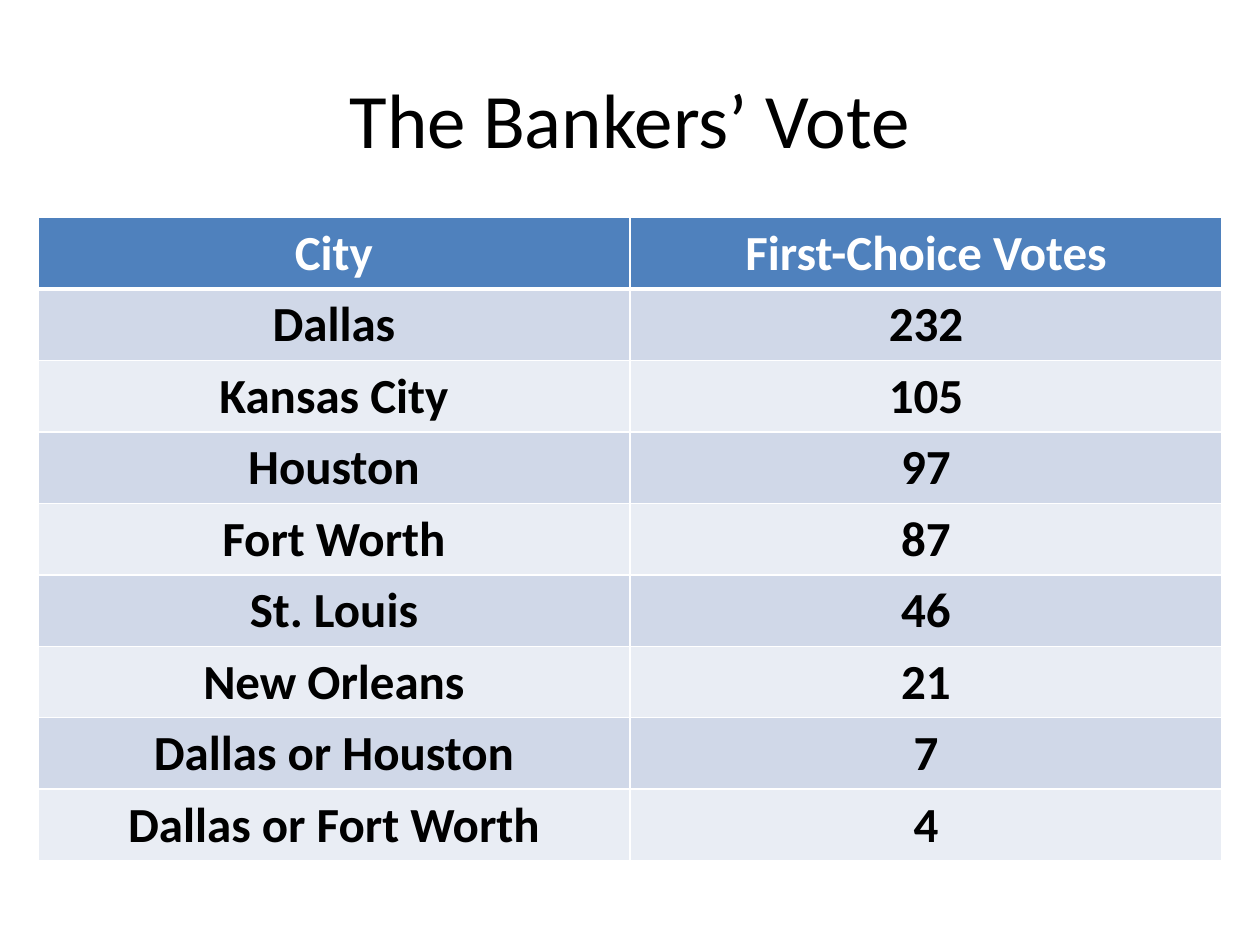
from pptx import Presentation
from pptx import util as u
from pptx.dml.color import RGBColor
from pptx.enum import text
from pptx.oxml import parse_xml
from pptx.oxml.ns import nsdecls

WIDTH, HEIGHT = 10, 7.5
HEADER_FILL, BAND_FILLS = "4F81BD", ("D0D8E8", "E9EDF4")
VOTES = [
    ("City", "First-Choice Votes"),
    ("Dallas", "232"),
    ("Kansas City", "105"),
    ("Houston", "97"),
    ("Fort Worth", "87"),
    ("St. Louis", "46"),
    ("New Orleans", "21"),
    ("Dallas or Houston", "7"),
    ("Dallas or Fort Worth", "4"),
]


def color(value):
    return RGBColor.from_string(value)


def write(frame, words, size=28, fill="000000", bold=False):
    """Put one centred line of formatted text into a text frame."""
    frame.word_wrap = True
    frame.vertical_anchor = text.MSO_ANCHOR.MIDDLE
    para = frame.paragraphs[0]
    para.alignment = text.PP_ALIGN.CENTER
    span = para.add_run()
    span.text = words
    span.font.name = "Calibri"
    span.font.size = u.Pt(size)
    span.font.bold = bold
    span.font.color.rgb = color(fill)


def add_borders(cell, bottom=1):
    """Draw white cell borders; they must come before the cell's fill."""
    properties = cell._tc.get_or_add_tcPr()
    sides = {"lnL": 1, "lnR": 1, "lnT": 1, "lnB": bottom}
    for place, (side, points) in enumerate(sides.items()):
        properties.insert(place, parse_xml(
            f'<a:{side} {nsdecls("a")} w="{u.Pt(points)}"><a:solidFill>'
            f'<a:srgbClr val="FFFFFF"/></a:solidFill></a:{side}>'))


def add_title(page, box, words):
    title = page.shapes.add_textbox(*box)
    write(title.text_frame, words, size=44)


def add_vote_table(page, box, rows):
    table = page.shapes.add_table(len(rows), len(rows[0]), *box).table
    for r, row in enumerate(rows):
        header = r == 0
        for c, words in enumerate(row):
            cell = table.cell(r, c)
            cell.vertical_anchor = text.MSO_ANCHOR.MIDDLE
            cell.fill.solid()
            cell.fill.fore_color.rgb = color(
                HEADER_FILL if header else BAND_FILLS[(r - 1) % 2])
            # A heavier rule sets the header apart from the body
            above_header_rule = r == 1
            add_borders(cell, bottom=3 if header else 1)
            if above_header_rule:
                cell._tc.tcPr.find(
                    "{http://schemas.openxmlformats.org/drawingml/2006/main}lnT"
                ).set("w", str(u.Pt(3)))
            write(cell.text_frame, words, bold=True,
                  fill="FFFFFF" if header else "000000")


def share(left, top, width, height):
    """Turn shares of the slide's size into a box."""
    return (u.Inches(left * WIDTH), u.Inches(top * HEIGHT),
            u.Inches(width * WIDTH), u.Inches(height * HEIGHT))


def main():
    deck = Presentation()
    deck.slide_width, deck.slide_height = u.Inches(WIDTH), u.Inches(HEIGHT)
    page = deck.slides.add_slide(deck.slide_layouts[6])

    # Title across the top, table filling the rest
    add_title(page, share(0.05, 0.04, 0.9, 0.17), "The Bankers’ Vote")
    add_vote_table(page, share(0.03, 0.23, 0.94, 0.68), VOTES)
    deck.save("out.pptx")


if __name__ == "__main__":
    main()
